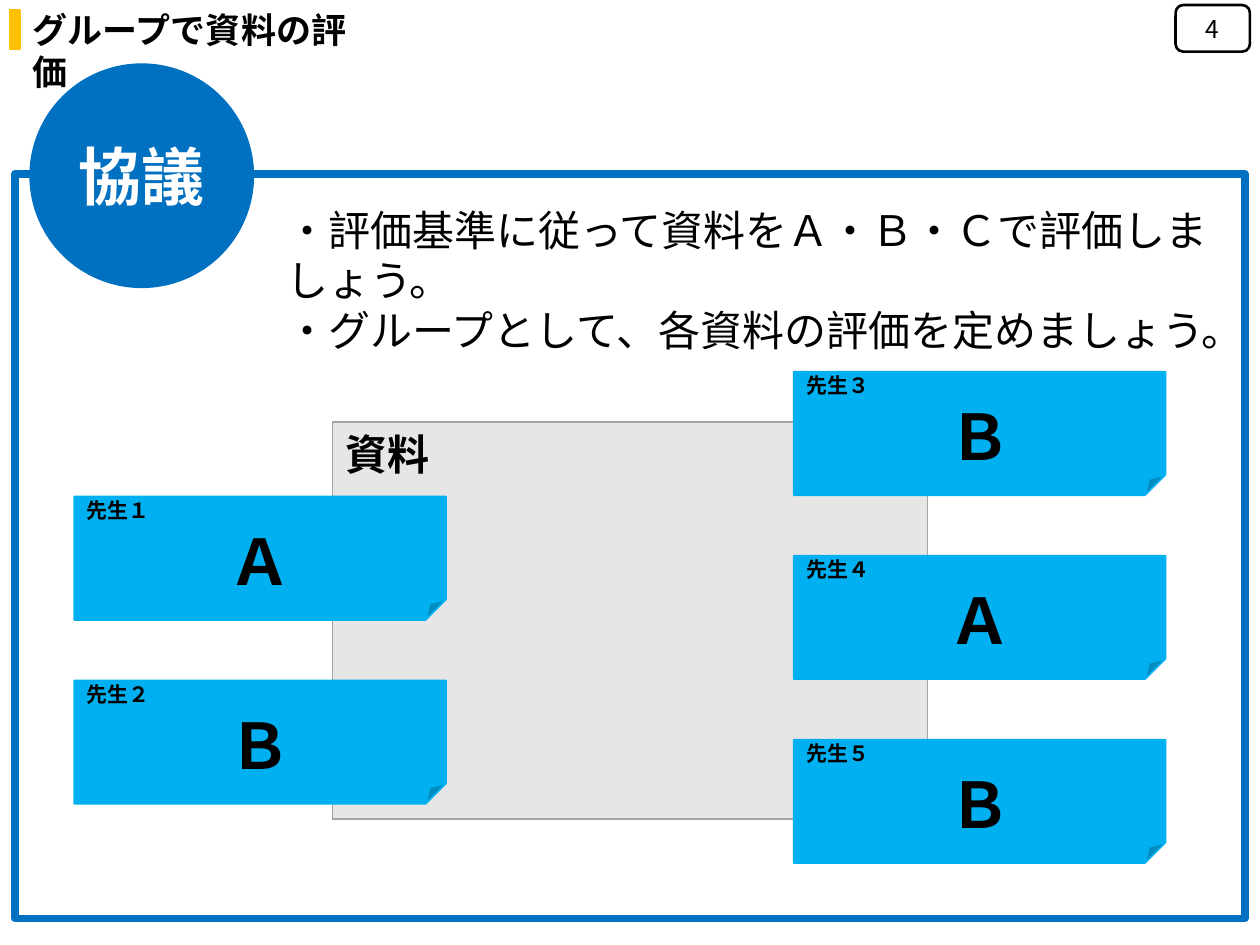
from pptx import Presentation
from pptx.dml.color import RGBColor
from pptx.enum.shapes import MSO_SHAPE as SHAPE
from pptx.enum.text import MSO_ANCHOR as ANCHOR, MSO_AUTO_SIZE as AUTO, PP_ALIGN as ALIGN
from pptx.oxml.ns import qn
from pptx.util import Inches, Pt

FONT = "Noto Sans CJK JP"
BLACK = RGBColor(0x00, 0x00, 0x00)
WHITE = RGBColor(0xFF, 0xFF, 0xFF)
BLUE = RGBColor(0x00, 0x70, 0xC0)
SKY = RGBColor(0x00, 0xB0, 0xF0)
AMBER = RGBColor(0xFF, 0xC0, 0x00)
PALE = RGBColor(0xE7, 0xE6, 0xE6)
GREY = RGBColor(0xA5, 0xA5, 0xA5)

CARD_W, CARD_H, CARD_STEP = 2.95, 0.98, 1.46
COLUMNS = [
    (6.3, 2.95, [("先生３", "Ｂ"), ("先生４", "Ａ"), ("先生５", "Ｂ")]),
    (0.59, 3.94, [("先生１", "Ａ"), ("先生２", "Ｂ")]),
]


def format_paragraph(p, size, bold=False, color=BLACK, align=ALIGN.LEFT):
    """Format a paragraph and its runs, without a bullet or indent."""
    p.alignment = align
    p.space_before = Pt(0)
    pPr = p._p.get_or_add_pPr()
    pPr.set("marL", "0")
    pPr.set("indent", "0")
    pPr.append(pPr.makeelement(qn("a:buNone"), {}))
    for r in p.runs:
        r.font.size, r.font.bold, r.font.name = Pt(size), bold, FONT
        r.font.color.rgb = color
        rPr = r._r.get_or_add_rPr()
        rPr.append(rPr.makeelement(qn("a:ea"), {"typeface": FONT}))


def set_text(s, text, size, anchor=ANCHOR.TOP, wrap=True, **style):
    """Fill a shape with text in one style."""
    tf = s.text_frame
    tf.text = text
    tf.auto_size, tf.word_wrap, tf.vertical_anchor = AUTO.NONE, wrap, anchor
    for p in tf.paragraphs:
        format_paragraph(p, size, **style)


def place(s, x, y, w, h):
    """Move and size a shape, in inches."""
    s.left, s.top, s.width, s.height = (Inches(v) for v in (x, y, w, h))


def add_box(slide, kind, x, y, w, h, fill, line, weight=1):
    """Add a preset shape, unfilled when fill is None."""
    s = slide.shapes.add_shape(kind, Inches(x), Inches(y), Inches(w), Inches(h))
    s.shadow.inherit = False
    if fill is None:
        s.fill.background()
    else:
        s.fill.solid()
        s.fill.fore_color.rgb = fill
    s.line.color.rgb = line
    s.line.width = Pt(weight)
    return s


def add_card(slide, x, y, teacher, grade):
    """Add a sticky note with a teacher's grade."""
    s = add_box(slide, SHAPE.FOLDED_CORNER, x, y, CARD_W, CARD_H, SKY, SKY)
    set_text(s, f"{teacher}\n{grade}", 12, ANCHOR.MIDDLE, bold=True)
    p = s.text_frame.paragraphs[1]
    p.alignment = ALIGN.CENTER
    p.runs[0].font.size = Pt(36)


def add_header(slide):
    """Set the title with its marker and the page number."""
    title = slide.shapes.title
    place(title, 0.16, 0.02, 2.79, 0.44)
    set_text(title, "グループで資料の評価", 20, bold=True)
    add_box(slide, SHAPE.RECTANGLE, 0.08, 0.08, 0.08, 0.31, AMBER, AMBER)
    page = add_box(slide, SHAPE.ROUNDED_RECTANGLE, 9.33, 0.04, 0.59, 0.37, WHITE, BLACK, 1.5)
    set_text(page, "4", 14, ANCHOR.MIDDLE, False, align=ALIGN.CENTER)


def add_discussion(slide):
    """Add the blue frame, its round label and the instructions."""
    add_box(slide, SHAPE.RECTANGLE, 0.12, 1.38, 9.76, 5.91, None, BLUE, 4.5)
    add_box(slide, SHAPE.OVAL, 0.24, 0.51, 1.77, 1.77, BLUE, BLUE)
    label = slide.shapes.add_textbox(Inches(0.52), Inches(1.04), Inches(1.21), Inches(0.71))
    set_text(label, "協議", 36, wrap=False, bold=True, color=WHITE, align=ALIGN.CENTER)
    body = slide.placeholders[1]
    place(body, 2.17, 1.57, 7.59, 0.91)
    set_text(body, "・評価基準に従って資料をＡ・Ｂ・Ｃで評価しましょう。\n"
                   "・グループとして、各資料の評価を定めましょう。", 24)


def main():
    """Build the slide."""
    prs = Presentation()
    prs.slide_width, prs.slide_height = Inches(10), Inches(7.5)
    slide = prs.slides.add_slide(prs.slide_layouts[1])
    add_discussion(slide)
    add_header(slide)
    sheet = add_box(slide, SHAPE.RECTANGLE, 2.64, 3.35, 4.72, 3.15, PALE, GREY, 0.75)
    set_text(sheet, "資料", 24, bold=True)
    for x, top, cards in COLUMNS:
        for i, (teacher, grade) in enumerate(cards):
            add_card(slide, x, top + i * CARD_STEP, teacher, grade)
    prs.save("out.pptx")


if __name__ == "__main__":
    main()
